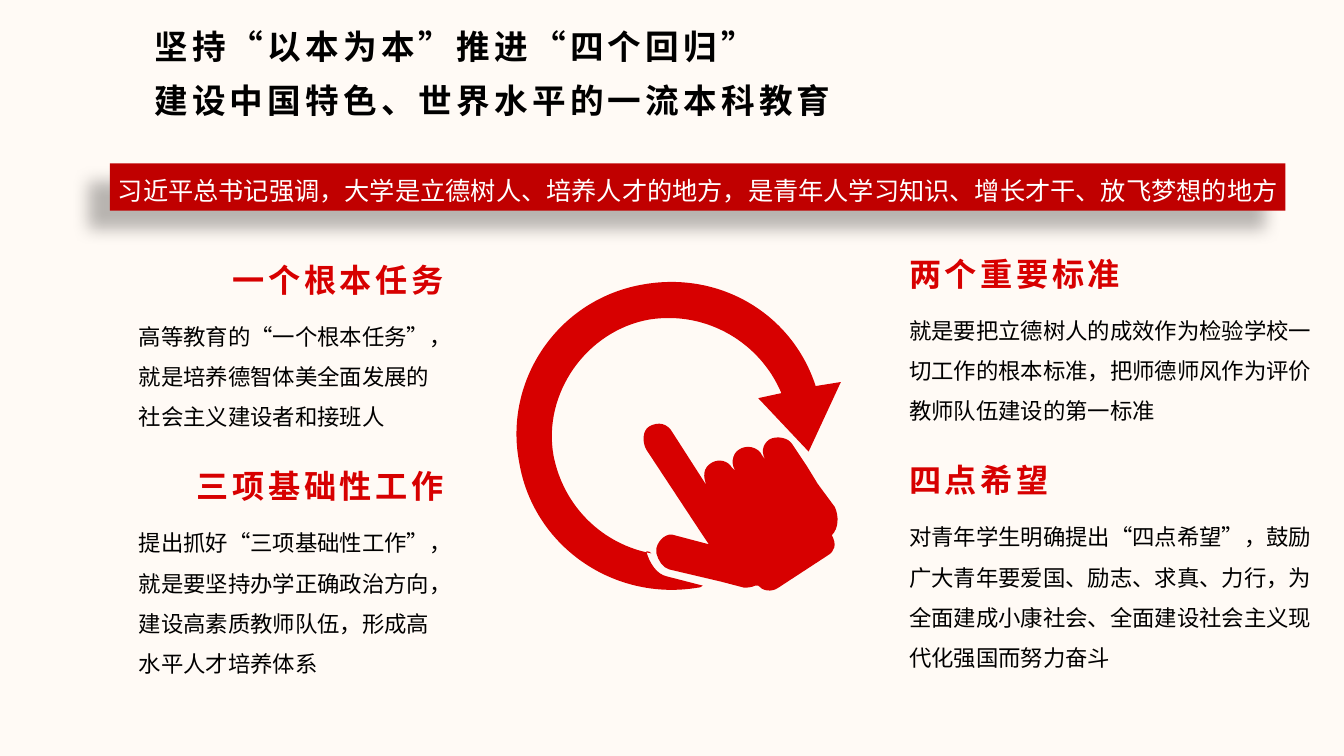
from lxml.etree import SubElement
from pptx import Presentation
from pptx.dml.color import RGBColor
from pptx.enum.shapes import MSO_SHAPE
from pptx.enum.text import MSO_ANCHOR, MSO_AUTO_SIZE, PP_ALIGN
from pptx.oxml.ns import qn
from pptx.util import Inches, Pt

FONT = "Noto Sans CJK SC"
BLACK, WHITE, RED, DARK_RED, CREAM = "000000", "FFFFFF", "D70000", "C00000", "FFFAF5"

# Outlines in inches from the icon's corner: pairs are line ends,
# six numbers are two control points and the end of a curve.
ARROW = [
    (1.62, 3.02), (1.97, 3.11),
    (1.94, 3.13, 1.94, 3.13, 1.92, 3.13),
    (1.09, 3.27, 0.29, 2.72, 0.15, 1.89),
    (-0.01, 1.07, 0.54, 0.26, 1.39, 0.12),
    (2.15, -0.01, 2.86, 0.42, 3.09, 1.13),
    (3.34, 1.09), (3.02, 1.78), (2.52, 1.25), (2.75, 1.2),
    (2.54, 0.7, 2.01, 0.38, 1.44, 0.47),
    (0.82, 0.58, 0.38, 1.2, 0.49, 1.82),
    (0.59, 2.33, 0.98, 2.7, 1.46, 2.79),
    (1.44, 2.77, 1.44, 2.77, 1.41, 2.77),
    (1.44, 2.88, 1.51, 3.0, 1.62, 3.02),
]
HAND = [
    (3.28, 2.33), (3.11, 2.1), (3.0, 1.92), (2.86, 1.71),
    (2.82, 1.64, 2.7, 1.62, 2.63, 1.66),
    (2.56, 1.71, 2.54, 1.8, 2.61, 1.89),
    (2.56, 1.82),
    (2.52, 1.73, 2.4, 1.71, 2.33, 1.76),
    (2.26, 1.8, 2.24, 1.92, 2.31, 1.99),
    (2.26, 1.94),
    (2.22, 1.87, 2.13, 1.85, 2.06, 1.89),
    (1.97, 1.94, 1.97, 2.03, 2.01, 2.12),
    (1.67, 1.59),
    (1.62, 1.5, 1.53, 1.48, 1.44, 1.53),
    (1.37, 1.57, 1.37, 1.69, 1.41, 1.76),
    (1.97, 2.61), (2.01, 2.67), (2.03, 2.7), (1.69, 2.61),
    (1.62, 2.58, 1.53, 2.65, 1.51, 2.74),
    (1.51, 2.74, 1.51, 2.77, 1.51, 2.79),
    (1.53, 2.86, 1.57, 2.93, 1.64, 2.95),
    (2.15, 3.07), (2.38, 3.13),
    (2.4, 3.13, 2.45, 3.13, 2.49, 3.11),
    (2.52, 3.11),
    (2.56, 3.16, 2.65, 3.18, 2.72, 3.13),
    (3.21, 2.81),
    (3.28, 2.77, 3.3, 2.7, 3.25, 2.61),
    (3.32, 2.54, 3.32, 2.42, 3.28, 2.33),
]

# Heading, its width, body, and left, top, width, height of the whole block
LEFT_TOPICS = [
    ("一个根本任务", 2.35, "高等教育的“一个根本任务”，就是培养德智体美全面发展的社会主义建设者和接班人",
     (1.28, 2.53, 3.12, 1.8)),
    ("三项基础性工作", 2.71, "提出抓好“三项基础性工作”，就是要坚持办学正确政治方向，建设高素质教师队伍，形成高水平人才培养体系",
     (1.28, 4.58, 3.12, 2.2)),
]
RIGHT_TOPICS = [
    ("两个重要标准", 2.35, "就是要把立德树人的成效作为检验学校一切工作的根本标准，把师德师风作为评价教师队伍建设的第一标准",
     (8.92, 2.47, 4.38, 1.8)),
    ("四点希望", 1.63, "对青年学生明确提出“四点希望”，鼓励广大青年要爱国、励志、求真、力行，为全面建成小康社会、全面建设社会主义现代化强国而努力奋斗",
     (8.92, 4.52, 4.23, 2.2)),
]
HEADING_HEIGHT = 0.49


def rgb(value):
    return RGBColor.from_string(value)


def style_text(frame, size, color, bold=False, spacing=0):
    """Format every run, for Latin and East Asian letters alike."""
    for paragraph in frame.paragraphs:
        for span in paragraph.runs:
            font = span.font
            font.name, font.size, font.bold = FONT, Pt(size), bold
            font.color.rgb = rgb(color)
            properties = font._element
            properties.set("lang", "zh-CN")
            properties.set("spc", str(int(spacing * 100)))
            SubElement(properties, qn("a:ea"), typeface=FONT)


def add_text(page, text, box, wrap=True, align=PP_ALIGN.LEFT, line_spacing=1.0):
    frame = page.shapes.add_textbox(*map(Inches, box)).text_frame
    frame.word_wrap = wrap
    frame.text = text
    frame.paragraphs[0].alignment = align
    frame.paragraphs[0].line_spacing = line_spacing
    return frame


def add_title(page, lines, box):
    title = page.shapes.title
    title.left, title.top, title.width, title.height = map(Inches, box)
    frame = title.text_frame
    frame.text = "\n".join(lines)
    frame.word_wrap = True
    frame.auto_size = MSO_AUTO_SIZE.NONE
    frame.vertical_anchor = MSO_ANCHOR.MIDDLE
    for index, paragraph in enumerate(frame.paragraphs):
        paragraph.alignment = PP_ALIGN.LEFT
        paragraph.line_spacing = 1.0
        paragraph.space_before = Pt(10 if index else 0)
    style_text(frame, 24, BLACK, bold=True, spacing=3)


def add_shadow(shape, color, opacity, blur, distance, angle):
    shape.shadow.inherit = False
    effects = shape._element.spPr.find(qn("a:effectLst"))
    shadow = SubElement(effects, qn("a:outerShdw"), blurRad=str(Pt(blur)),
                        dist=str(Pt(distance)), dir=str(angle * 60000),
                        algn="ctr", rotWithShape="0")
    tint = SubElement(shadow, qn("a:srgbClr"), val=color)
    SubElement(tint, qn("a:alpha"), val=str(opacity * 1000))


def add_banner(page, text, box):
    banner = page.shapes.add_shape(MSO_SHAPE.RECTANGLE, *map(Inches, box))
    banner.fill.solid()
    banner.fill.fore_color.rgb = rgb(DARK_RED)
    banner.line.fill.background()
    add_shadow(banner, BLACK, 27, 11.8, 19.7, 141)
    frame = banner.text_frame
    frame.text = text
    frame.word_wrap = True
    frame.vertical_anchor = MSO_ANCHOR.MIDDLE
    frame.margin_left, frame.margin_right = Inches(0.08), Inches(0.07)
    frame.margin_top, frame.margin_bottom = Inches(0.04), Inches(0.06)
    frame.paragraphs[0].alignment = PP_ALIGN.JUSTIFY
    frame.paragraphs[0].line_spacing = 1.3
    style_text(frame, 18, WHITE)


def add_topic(page, topic, right_aligned=False):
    heading, heading_width, body, (left, top, width, height) = topic
    heading_left = left + width + 0.1 - heading_width if right_aligned else left
    align = PP_ALIGN.RIGHT if right_aligned else PP_ALIGN.LEFT
    frame = add_text(page, heading, (heading_left, top, heading_width, HEADING_HEIGHT),
                     wrap=False, align=align)
    style_text(frame, 23, RED, bold=True, spacing=2.5)
    body_box = (left, top + HEADING_HEIGHT, width, height - HEADING_HEIGHT)
    style_text(add_text(page, body, body_box, line_spacing=1.5), 16, BLACK)


def hundredths(segment):
    """Give the points of a segment as pairs of whole hundredths of an inch."""
    numbers = [round(number * 100) for number in segment]
    return list(zip(numbers[::2], numbers[1::2]))


def bend(line, points, shift):
    """Turn a straight path element into a cubic curve through its points."""
    line.tag = qn("a:cubicBezTo")
    line.remove(line[0])
    for x, y in points:
        SubElement(line, qn("a:pt"), x=str(x - shift[0]), y=str(y - shift[1]))


def add_hand_icon(page, left, top):
    arrow, hand = ([hundredths(segment) for segment in outline] for outline in (ARROW, HAND))
    builder = page.shapes.build_freeform(*arrow[0][-1], scale=Inches(1) / 100)
    builder.add_line_segments([points[-1] for points in arrow[1:]], close=False)
    builder.move_to(*hand[0][-1])
    builder.add_line_segments([points[-1] for points in hand[1:]], close=True)
    icon = builder.convert_to_shape(Inches(left), Inches(top))
    icon.shadow.inherit = False
    icon.fill.solid()
    icon.fill.fore_color.rgb = rgb(RED)
    icon.line.fill.background()
    segments = arrow[1:] + hand[1:]
    ends = [points[-1] for points in arrow + hand]
    shift = min(x for x, y in ends), min(y for x, y in ends)
    lines = list(icon._element.iter(qn("a:lnTo")))
    for line, points in zip(lines, segments):
        if len(points) == 3:
            bend(line, points, shift)


def main():
    deck = Presentation()
    deck.slide_width, deck.slide_height = Inches(13.33), Inches(7.5)
    page = deck.slides.add_slide(deck.slide_layouts[5])
    page.background.fill.solid()
    page.background.fill.fore_color.rgb = rgb(CREAM)
    add_hand_icon(page, 5, 2.7)
    for topic in RIGHT_TOPICS:
        add_topic(page, topic)
    for topic in LEFT_TOPICS:
        add_topic(page, topic, right_aligned=True)
    add_title(page, ["坚持“以本为本”推进“四个回归”", "建设中国特色、世界水平的一流本科教育"],
              (1.43, 0.2, 9.45, 1.05))
    add_banner(page, "习近平总书记强调，大学是立德树人、培养人才的地方，是青年人学习知识、增长才干、放飞梦想的地方",
               (1.09, 1.62, 11.66, 0.47))
    deck.save("out.pptx")


if __name__ == "__main__":
    main()
